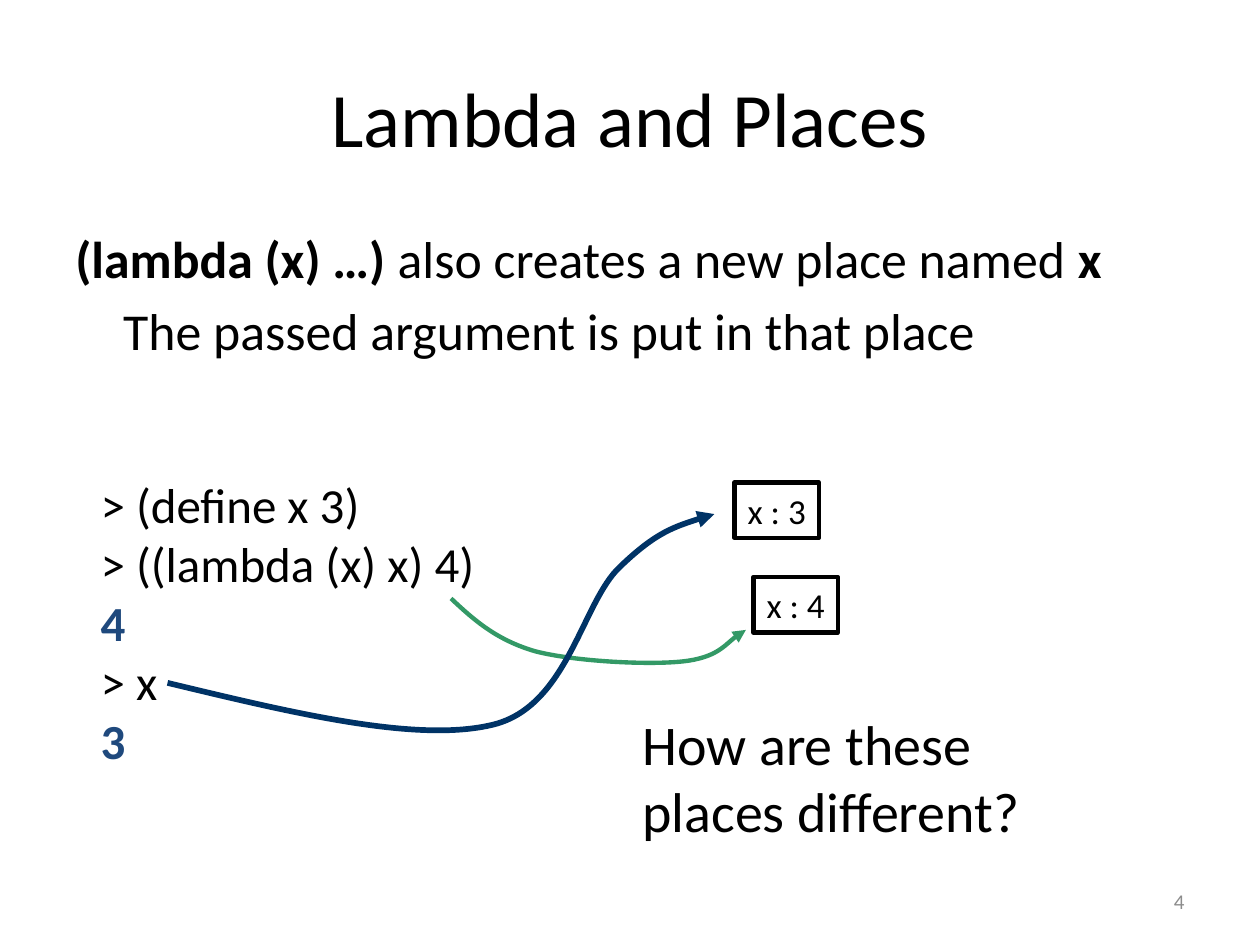
from pptx import Presentation
from pptx.dml.color import RGBColor
from pptx.enum.shapes import MSO_SHAPE
from pptx.enum.text import MSO_ANCHOR, PP_ALIGN
from pptx.oxml.ns import qn
from pptx.util import Inches, Pt
from lxml import etree

RECTANGLE = MSO_SHAPE.RECTANGLE
TOP, MIDDLE = MSO_ANCHOR.TOP, MSO_ANCHOR.MIDDLE
LEFT, CENTER, RIGHT = PP_ALIGN.LEFT, PP_ALIGN.CENTER, PP_ALIGN.RIGHT

FONT = "Calibri"
WIDTH, HEIGHT = 10, 7.5
MARGIN = 0.05 * WIDTH
CONTENT = WIDTH - 2 * MARGIN
COLORS = {
    "text": "000000",
    "result": "1F497D",
    "number": "8C8C8C",
    "lambda": "339966",
    "define": "003366",
}


def rgb(name):
    return RGBColor.from_string(COLORS[name])


def write(shape, paragraphs, size, color="text", align=LEFT, anchor=TOP,
          wrap=True, space_before=0, indents=()):
    frame = shape.text_frame
    frame.word_wrap = wrap
    frame.vertical_anchor = anchor
    for index, runs in enumerate(paragraphs):
        paragraph = frame.paragraphs[0] if index == 0 else frame.add_paragraph()
        paragraph.alignment = align
        paragraph.space_before = Pt(space_before)
        if indents:
            paragraph._p.get_or_add_pPr().set("marL", str(Inches(indents[index])))
        for text, bold, run_color in runs:
            run = paragraph.add_run()
            run.text = text
            run.font.name = FONT
            run.font.size = Pt(size)
            run.font.bold = bold
            run.font.color.rgb = rgb(run_color or color)


def plain(*lines):
    return [[(line, False, None)] for line in lines]


def add_text(slide, left, top, width, height, paragraphs, size, **text_format):
    box = slide.shapes.add_textbox(*map(Inches, (left, top, width, height)))
    write(box, paragraphs, size, **text_format)


def add_place(slide, left, top, label):
    place = slide.shapes.add_shape(
        RECTANGLE, *map(Inches, (left, top, 0.67, 0.44)))
    place.shadow.inherit = False
    place.fill.background()
    place.line.color.rgb = rgb("text")
    place.line.width = Pt(2.5)
    write(place, plain(label), 20, align=CENTER, anchor=MIDDLE, wrap=False)


def add_curved_arrow(slide, points, color, width):
    start, *controls = [tuple(map(Inches, point)) for point in points]
    builder = slide.shapes.build_freeform(*start)
    builder.add_line_segments(controls, close=False)
    arrow = builder.convert_to_shape()
    arrow.shadow.inherit = False
    arrow.fill.background()
    arrow.line.color.rgb = rgb(color)
    arrow.line.width = Pt(width)
    segments = arrow._element.xpath(".//a:lnTo")
    for first in range(0, len(segments), 3):
        curve = etree.Element(qn("a:cubicBezTo"))
        segments[first].addprevious(curve)
        for segment in segments[first:first + 3]:
            curve.append(segment[0])
            segment.getparent().remove(segment)
    etree.SubElement(arrow.line._get_or_add_ln(), qn("a:tailEnd"), type="triangle")


def main():
    presentation = Presentation()
    presentation.slide_width = Inches(WIDTH)
    presentation.slide_height = Inches(HEIGHT)
    slide = presentation.slides.add_slide(presentation.slide_layouts[6])

    add_text(slide, MARGIN, 0.04 * HEIGHT, CONTENT, HEIGHT / 6,
             plain("Lambda and Places"), 44, align=CENTER, anchor=MIDDLE)
    statement = [
        ("(lambda (x) …)", True, None),
        (" also creates a new place named ", False, None),
        ("x", True, None),
    ]
    add_text(slide, MARGIN, 1.75, CONTENT, HEIGHT / 6,
             [statement, *plain("The passed argument is put in that place")],
             29.6, space_before=5.9, indents=(0, 0.38))

    session = [
        ("> (define x 3)", False, None),
        ("> ((lambda (x) x) 4)", False, None),
        ("4", True, "result"),
        ("> x", False, None),
        ("3", True, "result"),
    ]
    add_text(slide, 0.7, 3.72, 3.98, 2.44, [[line] for line in session], 28)
    add_text(slide, WIDTH / 2, 5.58, 3.43, 1.17,
             plain("How are these", "places different?"), 32, wrap=False)

    add_place(slide, 5.83, 3.83, "x : 3")
    add_place(slide, 5.98, 4.58, "x : 4")
    add_curved_arrow(slide, [
        (3.58, 4.75),
        (3.76, 4.92), (3.94, 5.08), (4.25, 5.17),
        (4.56, 5.25), (5.14, 5.28), (5.42, 5.25),
        (5.69, 5.22), (5.83, 5.04), (5.92, 5),
    ], "lambda", 2.5)
    add_curved_arrow(slide, [
        (1.33, 5.42),
        (2.33, 5.66), (3.32, 5.9), (3.92, 5.75),
        (4.51, 5.6), (4.62, 4.78), (4.92, 4.5),
        (5.21, 4.22), (5.44, 4.15), (5.67, 4.08),
    ], "define", 3.25)

    add_text(slide, WIDTH - MARGIN - 2.33, 6.95, 2.33, 0.4, plain("4"), 12,
             color="number", align=RIGHT, anchor=MIDDLE)
    presentation.save("out.pptx")


if __name__ == "__main__":
    main()
